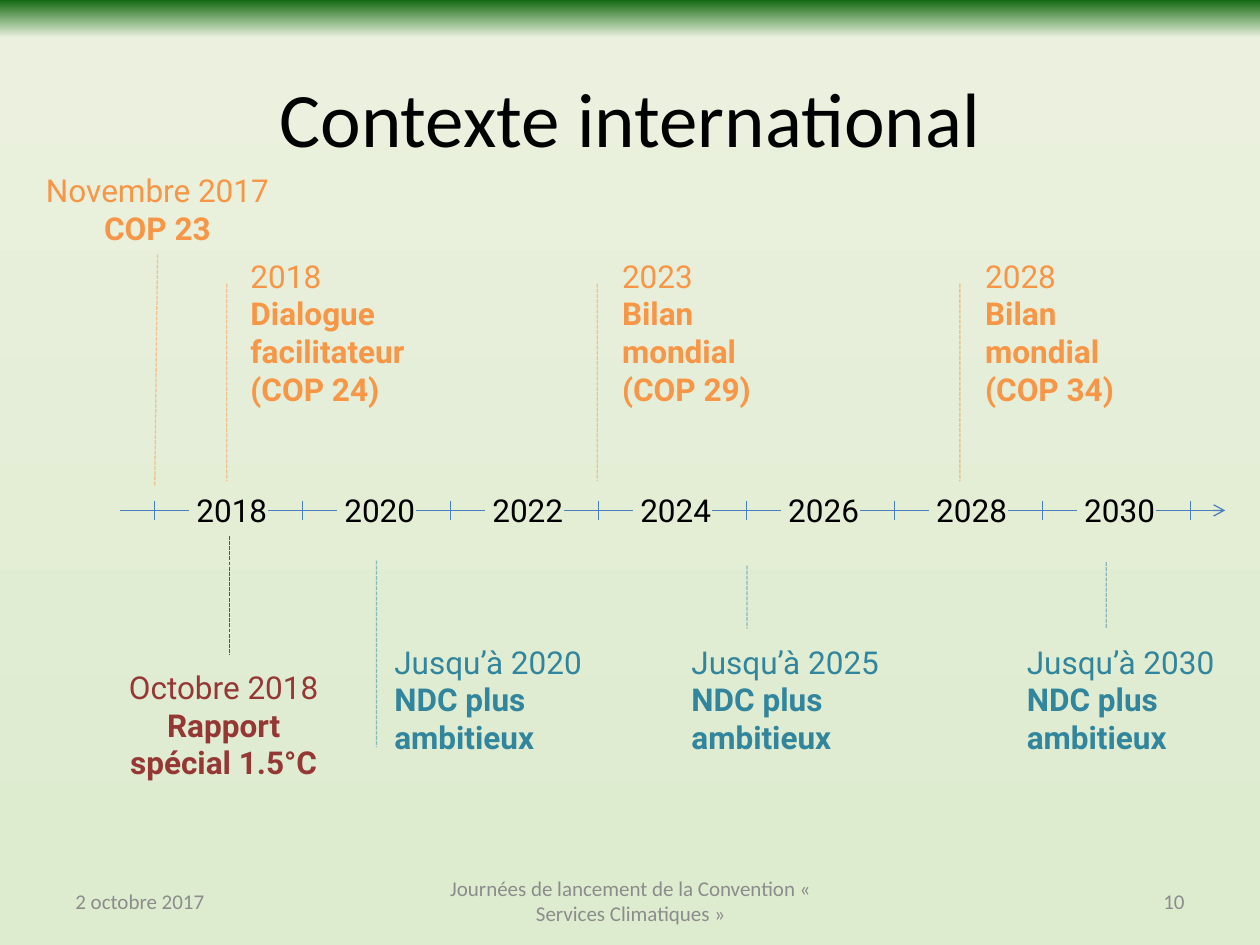
from dataclasses import dataclass

from lxml import etree
from pptx import Presentation
from pptx.dml.color import RGBColor
from pptx.enum.dml import MSO_LINE
from pptx.enum.shapes import MSO_CONNECTOR
from pptx.enum.text import MSO_ANCHOR, PP_ALIGN
from pptx.oxml.ns import qn
from pptx.util import Cm, Pt

LEFT, CENTER, RIGHT = PP_ALIGN.LEFT, PP_ALIGN.CENTER, PP_ALIGN.RIGHT
TOP, MIDDLE = MSO_ANCHOR.TOP, MSO_ANCHOR.MIDDLE
STRAIGHT, DASH = MSO_CONNECTOR.STRAIGHT, MSO_LINE.SQUARE_DOT
BOTTOM_SIDE = 2


@dataclass(frozen=True)
class Theme:
    heading_font: str = "Calibri"
    body_font: str = "Roboto"
    black: str = "000000"
    grey: str = "8C8C8C"
    axis: str = "4B7EBC"
    orange: str = "F79646"
    teal: str = "31859C"
    red: str = "953735"
    background: tuple = ((6, "DDEBCF"), (96, "EBF1DE"), (100, "156B13"))
    title_size: int = 44
    body_size: int = 18
    footer_size: int = 12
    line_width: float = 0.75


theme = Theme()
deck = Presentation()
deck.slide_width, deck.slide_height = Cm(25.4), Cm(19.05)
page = deck.slides.add_slide(deck.slide_layouts[6])


def add_text(text, *, at, color=theme.black, size=theme.body_size, font=theme.body_font,
             align=LEFT, anchor=TOP, wrap=True, bold_after_first=False):
    """Add a text box; each line of the text becomes a paragraph."""
    box = page.shapes.add_textbox(*(Cm(value) for value in at))
    frame = box.text_frame
    frame.word_wrap, frame.vertical_anchor = wrap, anchor
    for index, line in enumerate(text.split("\n")):
        para = frame.paragraphs[0] if index == 0 else frame.add_paragraph()
        para.alignment = align
        span = para.add_run()
        span.text = line
        span.font.name, span.font.size = font, Pt(size)
        span.font.bold = bold_after_first and index > 0
        span.font.color.rgb = RGBColor.from_string(color)
    return box


def add_line(start, end, *, color=theme.axis, dashed=False, opacity=100, arrow=False):
    """Add a thin straight connector without a shadow."""
    line = page.shapes.add_connector(STRAIGHT, *(Cm(value) for value in (*start, *end)))
    line.line.width = Pt(theme.line_width)
    line.line.color.rgb = RGBColor.from_string(color)
    if dashed:
        line.line.dash_style = DASH
    properties = line._element.spPr
    if opacity < 100:
        tint = properties.find(".//" + qn("a:srgbClr"))
        etree.SubElement(tint, qn("a:alpha"), val=str(opacity * 1000))
    if arrow:
        etree.SubElement(properties.find(qn("a:ln")), qn("a:tailEnd"), type="arrow")
    etree.SubElement(properties, qn("a:effectLst"))
    return line


# Background: gradient rising from pale green to a dark green band
fill = page.background.fill
fill.gradient()
fill.gradient_angle = 90
stops = page.background._cSld.find(".//" + qn("a:gsLst"))
for old_stop in list(stops):
    stops.remove(old_stop)
for position, color in theme.background:
    stop = etree.SubElement(stops, qn("a:gs"), pos=str(position * 1000))
    etree.SubElement(stop, qn("a:srgbClr"), val=color)

# Title
add_text("Contexte international", at=(1.27, 0.76, 22.86, 3.18), size=theme.title_size,
         font=theme.heading_font, align=CENTER, anchor=MIDDLE)

# Time axis: a tick with a short dash on each side, and a year in each gap
first_tick, last_tick, axis_y = 3.12, 24.0, 10.29
years = range(2018, 2031, 2)
step = (last_tick - first_tick) / len(years)
for index, year in enumerate(years):
    add_text(str(year), at=(3.71 + index * step, 9.78, 2.06, 1.02), wrap=False)
for index in range(len(years) + 1):
    x = first_tick + index * step
    add_line((x, axis_y - 0.2), (x, axis_y + 0.2))
    add_line((x - 0.7, axis_y), (x + 0.7, axis_y), arrow=index == len(years))

# Climate conferences above the axis: text, line x, box left, box width
conferences = [
    ("2018\nDialogue facilitateur\n(COP 24)", 4.57, 4.8, 4.01),
    ("2023\nBilan mondial\n(COP 29)", 12.04, 12.29, 3.58),
    ("2028\nBilan mondial\n(COP 34)", 19.35, 19.61, 3.58),
]
for text, x, left, width in conferences:
    add_line((x, 5.72), (x, 9.7), color=theme.orange, dashed=True, opacity=50)
    add_text(text, at=(left, 5.05, width, 3.33), color=theme.orange, bold_after_first=True)

# National commitments below the axis: year, line x, line top, line bottom, box left
commitments = [
    (2020, 7.59, 11.3, 15.06, 7.7),
    (2025, 15.06, 11.4, 12.67, 13.69),
    (2030, 22.3, 11.33, 12.67, 20.45),
]
for year, x, top, bottom, left in commitments:
    add_line((x, top), (x, bottom), color=theme.teal, dashed=True, opacity=50)
    add_text(f"Jusqu’à {year}\nNDC plus ambitieux", at=(left, 12.83, 4.39, 2.57),
             color=theme.teal, bold_after_first=True)

# Special report
add_line((4.62, 10.8), (4.62, 13.21), color=theme.red, dashed=True)
add_text("Octobre 2018\nRapport spécial 1.5°C", at=(2.11, 13.34, 4.8, 2.57),
         color=theme.red, align=CENTER, bold_after_first=True)

# Opening conference, joined to its line
opening = add_text("Novembre 2017\nCOP 23", at=(0.23, 3.33, 5.89, 1.8),
                   color=theme.orange, align=CENTER, bold_after_first=True)
opening_line = add_line((3.15, 5.13), (first_tick, 9.8), color=theme.orange,
                        dashed=True, opacity=50)
opening_line.begin_connect(opening, BOTTOM_SIDE)

# Footer
footers = [
    ("2 octobre 2017", 1.27, 5.92, LEFT),
    ("Journées de lancement de la Convention « Services Climatiques »", 8.69, 8.05, CENTER),
    ("10", 18.21, 5.92, RIGHT),
]
for text, left, width, align in footers:
    add_text(text, at=(left, 17.65, width, 1.02), color=theme.grey, size=theme.footer_size,
             font=theme.heading_font, align=align, anchor=MIDDLE)

deck.save("out.pptx")
